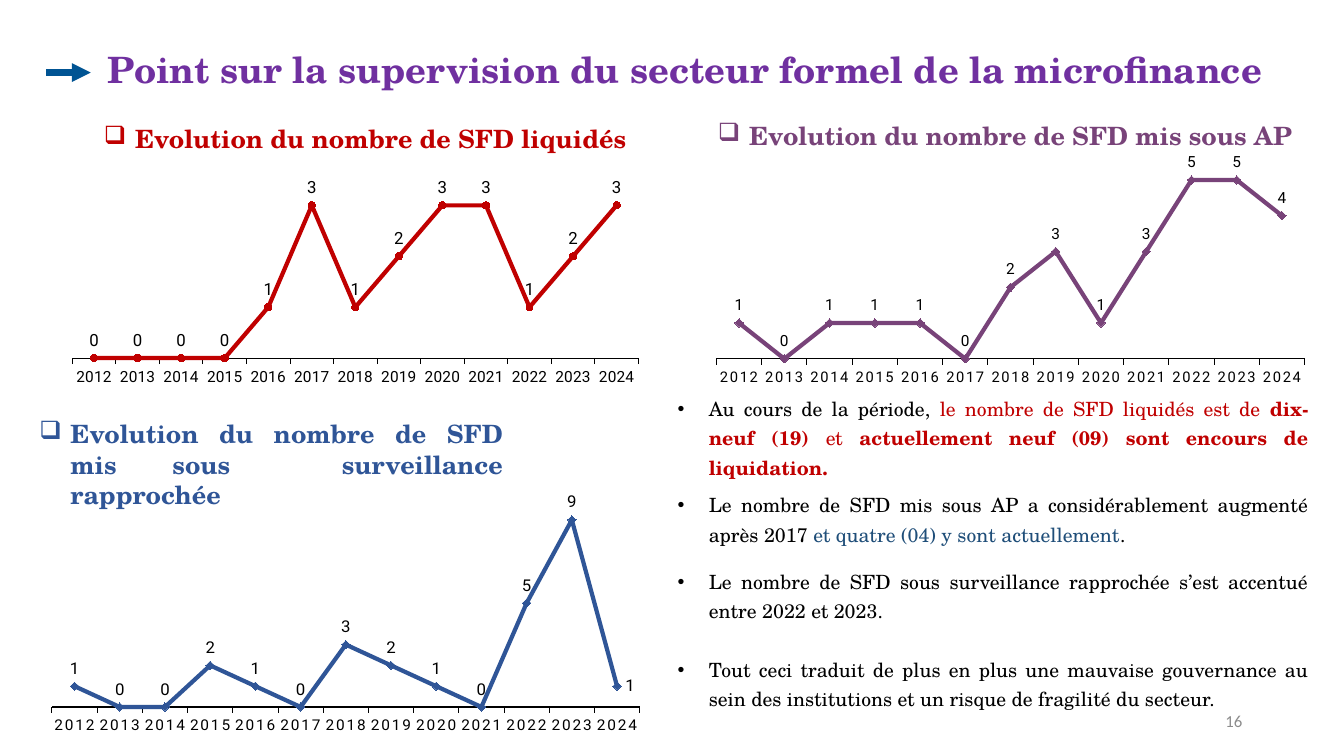
"""Build the slide on the supervision of the formal microfinance sector."""
import lxml.etree
import pptx
import pptx.chart.data
import pptx.dml.color
import pptx.enum.chart
import pptx.enum.shapes
import pptx.enum.text
import pptx.oxml.ns
import pptx.util

Inches = pptx.util.Inches
Pt = pptx.util.Pt
RGBColor = pptx.dml.color.RGBColor
qn = pptx.oxml.ns.qn
Marker = pptx.enum.chart.XL_MARKER_STYLE
LabelPosition = pptx.enum.chart.XL_LABEL_POSITION
Align = pptx.enum.text.PP_ALIGN
Anchor = pptx.enum.text.MSO_ANCHOR

BLACK = RGBColor(0x00, 0x00, 0x00)
WHITE = RGBColor(0xFF, 0xFF, 0xFF)
GRAY = RGBColor(0x8C, 0x8C, 0x8C)
PURPLE = RGBColor(0x70, 0x30, 0xA0)
PLUM = RGBColor(0x78, 0x43, 0x79)
RED = RGBColor(0xC0, 0x00, 0x00)
BLUE = RGBColor(0x2F, 0x55, 0x97)
LIGHT_BLUE = RGBColor(0x44, 0x72, 0xC4)
DARK_BLUE = RGBColor(0x1F, 0x4E, 0x79)
ARROW_BLUE = RGBColor(0x00, 0x54, 0x93)
SERIF = "TeX Gyre Schola"
CHART_FONT = "Roboto"
YEARS = [str(year) for year in range(2012, 2025)]


def style_font(font, size, color, name=SERIF, bold=False):
    font.name = name
    font.size = Pt(size)
    font.bold = bold
    font.color.rgb = color


def add_bullet(para, char):
    para.alignment = Align.JUSTIFY
    props = para._p.get_or_add_pPr()
    props.set("marL", str(Inches(0.31)))
    props.set("indent", str(-Inches(0.31)))
    lxml.etree.SubElement(props, qn("a:buChar")).set("char", char)


deck = pptx.Presentation()
deck.slide_width = Inches(13.33)
deck.slide_height = Inches(7.5)
page = deck.slides.add_slide(deck.slide_layouts[1])

title = page.shapes.title
title.left, title.top = Inches(0.97), Inches(0.35)
title.width, title.height = Inches(11.91), Inches(0.73)
title.text_frame.auto_size = pptx.enum.text.MSO_AUTO_SIZE.NONE
title.text_frame.vertical_anchor = Anchor.MIDDLE
para = title.text_frame.paragraphs[0]
para.alignment = Align.LEFT
para.line_spacing = 0.9
span = para.add_run()
span.text = "Point sur la supervision du secteur formel de la microfinance"
style_font(span.font, 25.9, PURPLE, bold=True)

findings = [
    (0, [("Au cours de la période, ", BLACK, False),
         ("le nombre de SFD liquidés est de ", RED, False),
         ("dix-neuf (19) ", RED, True),
         ("et ", RED, False),
         ("actuellement neuf (09) sont encours de liquidation.", RED, True)]),
    (6, [("Le nombre de SFD mis sous AP a considérablement augmenté après 2017 ", BLACK, False),
         ("et quatre (04) y sont actuellement", DARK_BLUE, False),
         (".", BLACK, False)]),
    (12.5, [("Le nombre de SFD sous surveillance rapprochée s’est accentué entre 2022 et 2023.",
             BLACK, False)]),
    (21, [("Tout ceci traduit de plus en plus une mauvaise gouvernance au sein des "
           "institutions et un risque de fragilité du secteur.", BLACK, False)]),
]
body = page.placeholders[1]
body.left, body.top = Inches(6.62), Inches(3.85)
body.width, body.height = Inches(6.46), Inches(3.23)
body.fill.solid()
body.fill.fore_color.rgb = WHITE
body.text_frame.auto_size = pptx.enum.text.MSO_AUTO_SIZE.NONE
body.text_frame.vertical_anchor = Anchor.MIDDLE
for index, (gap, spans) in enumerate(findings):
    para = body.text_frame.add_paragraph() if index else body.text_frame.paragraphs[0]
    para.line_spacing = 1.25
    para.space_before = Pt(gap)
    add_bullet(para, "•")
    for text, color, bold in spans:
        span = para.add_run()
        span.text = text
        style_font(span.font, 14, color, bold=bold)

number = page.shapes.add_textbox(Inches(9.42), Inches(6.95), Inches(3), Inches(0.4))
number.text_frame.word_wrap = True
number.text_frame.vertical_anchor = Anchor.MIDDLE
para = number.text_frame.paragraphs[0]
para.alignment = Align.RIGHT
span = para.add_run()
span.text = "16"
style_font(span.font, 12, GRAY, "Calibri")

arrow = page.shapes.add_connector(
    pptx.enum.shapes.MSO_CONNECTOR.STRAIGHT,
    Inches(0.46), Inches(0.72), Inches(0.9), Inches(0.72))
arrow.line.color.rgb = ARROW_BLUE
arrow.line.width = Pt(4.5)
lxml.etree.SubElement(arrow.line._get_or_add_ln(), qn("a:tailEnd")).set("type", "triangle")
lxml.etree.SubElement(arrow._element.spPr, qn("a:effectLst"))

headings = [
    ("Evolution du nombre de SFD liquidés", RED, (0.9, 1.09, 6.09, 0.57)),
    ("Evolution du nombre de SFD mis sous AP", PLUM, (6.99, 0.99, 6.09, 0.71)),
    ("Evolution du nombre de SFD mis sous  surveillance rapprochée", BLUE,
     (0.26, 4.32, 4.86, 0.57)),
]
charts = [
    dict(place=(0.25, 1.58, 6.15, 2.29), plot=(0.076, 0.134, 0.913, 0.772),
         values=[0, 0, 0, 0, 1, 3, 1, 2, 3, 3, 1, 2, 3], scale=(-0.2, 3.3),
         color=RED, marker=(Marker.CIRCLE, 5, RED), sizes=(11, 12), spacing=0),
    dict(place=(6.99, 1.32, 6.09, 2.52), plot=(0.019, 0.044, 0.958, 0.845),
         values=[1, 0, 1, 1, 1, 0, 2, 3, 1, 3, 5, 5, 4], scale=(0, 6),
         color=PLUM, marker=(Marker.DIAMOND, 6, PLUM), sizes=(10.5, 11), spacing=120),
    dict(place=(0.26, 4.77, 6.09, 2.52), plot=(0.042, 0.075, 0.958, 0.848),
         values=[1, 0, 0, 2, 1, 0, 3, 2, 1, 0, 5, 9, 1], scale=(0, 10),
         color=BLUE, marker=(Marker.DIAMOND, 6, LIGHT_BLUE), sizes=(11, 12), spacing=120),
]
for (text, color, place), item in zip(headings, charts):
    box = page.shapes.add_textbox(*map(Inches, place))
    box.text_frame.word_wrap = True
    box.text_frame.vertical_anchor = Anchor.MIDDLE
    box.text_frame.margin_left = box.text_frame.margin_right = Inches(0.13)
    para = box.text_frame.paragraphs[0]
    add_bullet(para, "❑")
    span = para.add_run()
    span.text = text
    style_font(span.font, 18, color, bold=True)

    data = pptx.chart.data.CategoryChartData()
    data.categories = YEARS
    data.add_series("Series 1", item["values"])
    chart = page.shapes.add_chart(
        pptx.enum.chart.XL_CHART_TYPE.LINE_MARKERS, *map(Inches, item["place"]), data).chart
    chart.has_title = False
    chart.has_legend = False
    axis_size, label_size = item["sizes"]
    style_font(chart.font, axis_size, BLACK, CHART_FONT)

    value_axis = chart.value_axis
    value_axis.visible = False
    value_axis.has_major_gridlines = False
    value_axis.minimum_scale, value_axis.maximum_scale = item["scale"]
    year_axis = chart.category_axis
    year_axis.major_tick_mark = pptx.enum.chart.XL_TICK_MARK.OUTSIDE
    year_axis.format.line.color.rgb = BLACK
    year_axis.format.line.width = Pt(0.75)
    style_font(year_axis.tick_labels.font, axis_size, BLACK, CHART_FONT)
    year_axis._element.find(".//" + qn("a:defRPr")).set("spc", str(item["spacing"]))

    plot = chart.plots[0]
    plot.vary_by_categories = False
    series = plot.series[0]
    series.smooth = False
    series.format.line.color.rgb = item["color"]
    series.format.line.width = Pt(3)
    series.marker.style, series.marker.size, marker_color = item["marker"]
    series.marker.format.fill.solid()
    series.marker.format.fill.fore_color.rgb = marker_color
    series.marker.format.line.color.rgb = marker_color
    series.data_labels.show_value = True
    series.data_labels.position = LabelPosition.ABOVE
    style_font(series.data_labels.font, label_size, BLACK, CHART_FONT)

    area = chart._chartSpace.chart.plotArea
    for old in area.findall(qn("c:layout")):
        area.remove(old)
    layout = lxml.etree.Element(qn("c:layout"))
    area.insert(0, layout)
    manual = lxml.etree.SubElement(layout, qn("c:manualLayout"))
    settings = [("layoutTarget", "inner"), ("xMode", "edge"), ("yMode", "edge")]
    for tag, value in settings + list(zip("xywh", item["plot"])):
        lxml.etree.SubElement(manual, qn("c:" + tag)).set("val", str(value))

last_label = series.points[12].data_label
style_font(last_label.font, 12, BLACK, CHART_FONT)
last_label.position = LabelPosition.RIGHT

deck.save("out.pptx")
